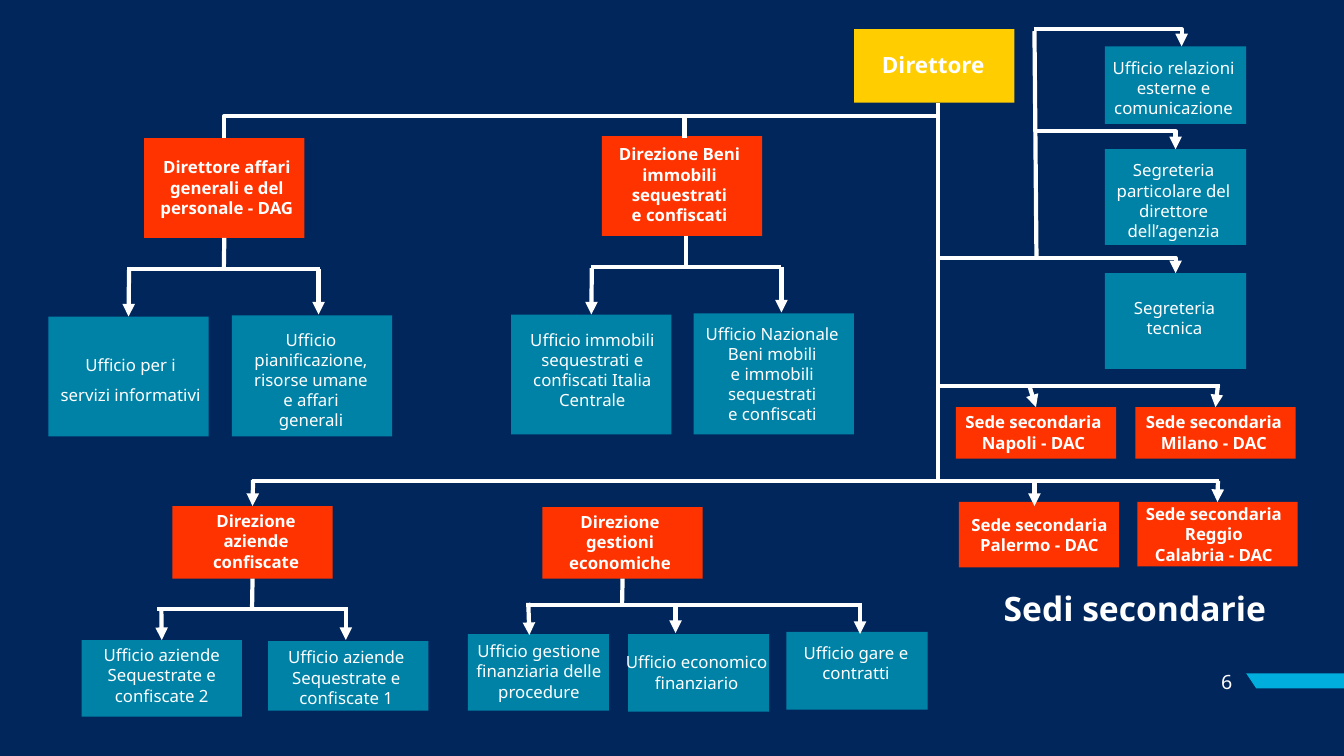
from dataclasses import dataclass
from lxml import etree
from pptx import Presentation
from pptx.dml.color import RGBColor
from pptx.enum import shapes, text
from pptx.oxml import ns
from pptx.util import Inches, Pt

COLORS = {"navy": "00265C", "teal": "0082A6", "red": "FF3300",
          "yellow": "FFCD00", "cyan": "00AEDE", "white": "FFFFFF"}
FONT = "Noto Sans"
Rect = tuple[float, float, float, float]


@dataclass
class Box:
    """An office: its rectangle, and the label laid over it."""
    name: str
    color: str
    at: Rect
    label_at: Rect
    label: str
    size: int = 12
    spacing: float = 1


@dataclass
class Link:
    """A line; below and above name the boxes it leaves and reaches."""
    start: tuple[float, float]
    end: tuple[float, float]
    arrow: bool = False
    elbow: bool = False
    below: str = ""
    above: str = ""


BOXES = [
    Box("direttore", "yellow", (8.47, 0.29, 1.59, 0.73), (8.48, 0.46, 1.55, 0.37), "Direttore", 16),
    Box("dag", "red", (1.43, 1.37, 1.59, 0.99), (1.47, 1.51, 1.56, 0.71),
        "Direttore affari generali e del personale - DAG"),
    Box("informativi", "teal", (0.48, 3.14, 1.59, 1.19), (0.5, 3.37, 1.59, 0.67),
        "Ufficio per i servizi informativi", spacing=1.5),
    Box("pianificazione", "teal", (2.3, 3.13, 1.59, 1.2), (2.38, 3.22, 1.41, 0.91),
        "Ufficio pianificazione, risorse umane\ne affari generali"),
    Box("immobili", "red", (5.97, 1.35, 1.59, 0.99), (5.96, 1.38, 1.56, 0.91),
        "Direzione Beni immobili sequestrati\ne confiscati"),
    Box("centrale", "teal", (5.07, 3.12, 1.59, 1.19), (5.08, 3.22, 1.59, 0.91),
        "Ufficio immobili sequestrati e confiscati Italia Centrale"),
    Box("nazionale", "teal", (6.88, 3.11, 1.59, 1.2), (6.86, 3.16, 1.6, 1.11),
        "Ufficio Nazionale Beni mobili\ne immobili sequestrati\ne confiscati"),
    Box("aziende", "red", (1.71, 5.02, 1.59, 0.72), (1.76, 5.02, 1.56, 0.71),
        "Direzione aziende confiscate"),
    Box("aziende 2", "teal", (0.81, 6.35, 1.59, 0.76), (0.81, 6.35, 1.59, 0.71),
        "Ufficio aziende\nSequestrate e confiscate 2"),
    Box("aziende 1", "teal", (2.66, 6.36, 1.59, 0.69), (2.73, 6.37, 1.41, 0.71),
        "Ufficio aziende\nSequestrate e confiscate 1"),
    Box("gestioni", "red", (5.38, 5.03, 1.59, 0.71), (5.37, 5.03, 1.56, 0.71),
        "Direzione gestioni economiche"),
    Box("procedure", "teal", (4.64, 6.29, 1.4, 0.76), (4.6, 6.31, 1.49, 0.71),
        "Ufficio gestione finanziaria delle procedure"),
    Box("finanziario", "teal", (6.23, 6.29, 1.4, 0.77), (6.06, 6.42, 1.7, 0.5),
        "Ufficio economico finanziario"),
    Box("gare", "teal", (7.8, 6.27, 1.4, 0.77), (7.69, 6.33, 1.6, 0.5),
        "Ufficio gare e contratti"),
    Box("relazioni", "teal", (10.96, 0.46, 1.4, 0.77), (10.84, 0.52, 1.6, 0.71),
        "Ufficio relazioni esterne e comunicazione"),
    Box("particolare", "teal", (10.96, 1.48, 1.4, 0.95), (10.84, 1.54, 1.6, 0.91),
        "Segreteria particolare del direttore dell’agenzia"),
    Box("tecnica", "teal", (10.96, 2.71, 1.4, 0.95), (10.85, 2.9, 1.6, 0.5),
        "Segreteria\ntecnica"),
    Box("napoli", "red", (9.48, 4.04, 1.59, 0.51), (9.47, 4.04, 1.56, 0.5),
        "Sede secondaria Napoli - DAC"),
    Box("milano", "red", (11.26, 4.04, 1.59, 0.51), (11.26, 4.04, 1.56, 0.5),
        "Sede secondaria Milano - DAC"),
    Box("palermo", "red", (9.51, 4.98, 1.59, 0.65), (9.53, 5.06, 1.56, 0.5),
        "Sede secondaria Palermo - DAC"),
    Box("calabria", "red", (11.28, 4.98, 1.59, 0.64), (11.26, 4.95, 1.56, 0.71),
        "Sede secondaria Reggio\nCalabria - DAC"),
]

LINKS = [
    # Trunk and upper directorates
    Link((2.5, 4.77), (9.3, 1.02), elbow=True),
    Link((9.29, 1.15), (6.79, 1.15)),
    Link((6.8, 1.15), (2.22, 1.37), elbow=True, above="dag"),
    Link((6.79, 1.14), (6.79, 1.37)),
    # Affari generali
    Link((2.22, 2.36), (2.22, 2.68), below="dag"),
    Link((1.26, 2.67), (3.17, 2.67)),
    Link((1.28, 2.68), (1.28, 3.14), arrow=True, above="informativi"),
    Link((3.16, 2.67), (3.16, 3.12), arrow=True),
    # Beni immobili
    Link((6.8, 2.34), (6.8, 2.66)),
    Link((5.86, 2.65), (7.75, 2.65)),
    Link((5.87, 2.66), (5.87, 3.12), arrow=True, above="centrale"),
    Link((7.75, 2.65), (7.75, 3.1), arrow=True),
    # Aziende confiscate
    Link((2.51, 4.76), (2.51, 5.02), arrow=True, above="aziende"),
    Link((2.5, 5.74), (2.5, 6.02), below="aziende"),
    Link((1.56, 6.04), (3.45, 6.04)),
    Link((1.6, 6.04), (1.6, 6.35), arrow=True, above="aziende 2"),
    Link((3.43, 6.06), (3.43, 6.35), arrow=True),
    # Gestioni economiche
    Link((6.17, 5.74), (6.17, 6), below="gestioni"),
    Link((5.22, 6), (8.53, 6)),
    Link((5.24, 5.98), (5.25, 6.3), arrow=True),
    Link((6.7, 6.02), (6.7, 6.28), arrow=True),
    Link((8.53, 5.98), (8.53, 6.29), arrow=True),
    # Staff of the director
    Link((10.26, 0.31), (10.28, 2.56)),
    Link((10.26, 0.29), (11.72, 0.46), arrow=True, elbow=True),
    Link((10.26, 1.3), (11.66, 1.48), arrow=True, elbow=True, above="particolare"),
    Link((10.28, 2.56), (11.66, 2.71), arrow=True, elbow=True, above="tecnica"),
    Link((10.28, 2.56), (9.29, 2.56)),
    # Sedi secondarie
    Link((9.29, 3.83), (12.1, 3.83)),
    Link((10.21, 3.83), (10.27, 4.04), arrow=True, above="napoli"),
    Link((12.08, 3.82), (12.05, 4.04), arrow=True, above="milano"),
    Link((9.28, 4.77), (12.09, 4.77)),
    Link((10.26, 4.78), (10.26, 5.02), arrow=True),
    Link((12.08, 4.77), (12.08, 4.98), arrow=True, above="calabria"),
]


def rgb(name: str) -> RGBColor:
    return RGBColor.from_string(COLORS[name])


def paint(sp, color: str) -> None:
    sp.shadow.inherit = False
    sp.fill.solid()
    sp.fill.fore_color.rgb = rgb(color)
    sp.line.fill.background()


def add_label(slide, at: Rect, words: str, size: int, bold: bool = False,
              align=text.PP_ALIGN.CENTER, spacing: float = 1):
    tf = slide.shapes.add_textbox(*map(Inches, at)).text_frame
    tf.word_wrap = True
    tf.text = words
    for p in tf.paragraphs:
        p.alignment = align
        p.line_spacing = spacing
        p.font.name, p.font.size, p.font.bold = FONT, Pt(size), bold
        p.font.color.rgb = rgb("white")
    return tf


def add_box(slide, box: Box):
    sp = slide.shapes.add_shape(shapes.MSO_SHAPE.RECTANGLE, *map(Inches, box.at))
    paint(sp, box.color)
    add_label(slide, box.label_at, box.label, box.size,
              bold=box.color != "teal", spacing=box.spacing)
    return sp


def add_link(slide, link: Link, boxes: dict) -> None:
    """Draw a line; an elbow runs across first, then up or down."""
    kind = shapes.MSO_CONNECTOR.ELBOW if link.elbow else shapes.MSO_CONNECTOR.STRAIGHT
    c = slide.shapes.add_connector(kind, *map(Inches, link.start + link.end))
    if link.below:
        c.begin_connect(boxes[link.below], 2)
    if link.above:
        c.end_connect(boxes[link.above], 0)
    c.line.color.rgb = rgb("white")
    c.line.width = Pt(3)
    props = c.element.spPr
    if link.elbow:
        props.find(ns.qn("a:prstGeom")).set("prst", "bentConnector2")
    if link.arrow:
        etree.SubElement(props.find(ns.qn("a:ln")), ns.qn("a:tailEnd"), type="triangle")
    etree.SubElement(props, ns.qn("a:effectLst"))


def main() -> None:
    prs = Presentation()
    prs.slide_width, prs.slide_height = Inches(13.33), Inches(7.5)
    slide = prs.slides.add_slide(prs.slide_layouts[6])
    slide.background.fill.solid()
    slide.background.fill.fore_color.rgb = rgb("navy")

    fb = slide.shapes.build_freeform(Inches(13.33), Inches(6.68))
    fb.add_line_segments([(Inches(x), Inches(y)) for x, y in
                          [(13.33, 6.83), (12.46, 6.83), (12.36, 6.68)]])
    paint(fb.convert_to_shape(), "cyan")

    boxes = {box.name: add_box(slide, box) for box in BOXES}
    for link in LINKS:
        add_link(slide, link, boxes)

    add_label(slide, (9.76, 5.78, 2.99, 0.5), "Sedi secondarie", 24, bold=True)
    number = add_label(slide, (11.72, 6.56, 0.6, 0.4), "6", 14, align=text.PP_ALIGN.RIGHT)
    number.vertical_anchor = text.MSO_ANCHOR.MIDDLE
    prs.save("out.pptx")


if __name__ == "__main__":
    main()
